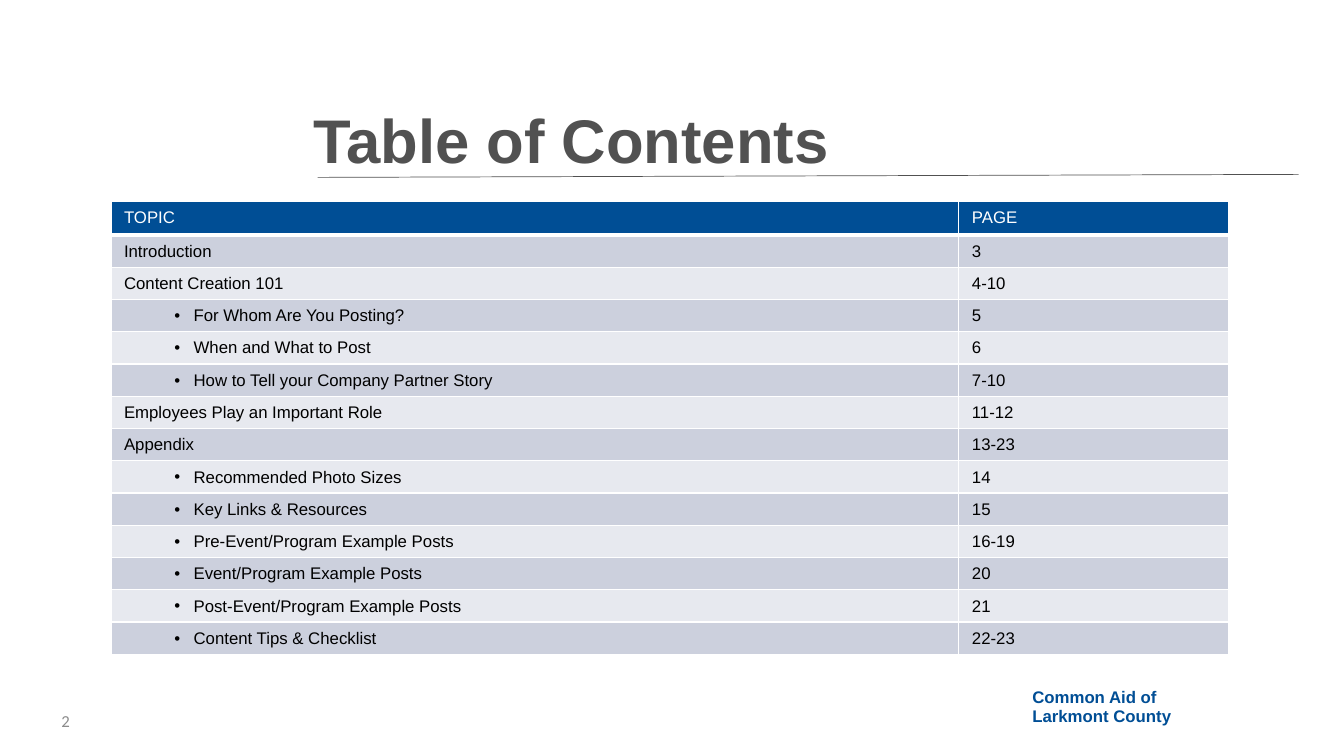
from dataclasses import dataclass

from lxml import etree
from pptx import Presentation, util as u
from pptx.dml.color import RGBColor
from pptx.enum import shapes, text
from pptx.oxml import ns


@dataclass(frozen=True)
class Theme:
    font: str = "Arial"
    plain: str = "Calibri"
    blue: str = "004E95"
    gray: str = "515151"
    pale: str = "8C8C8C"
    white: str = "FFFFFF"
    black: str = "000000"
    bands: tuple = ("CCD0DD", "E7E9EF")
    big: int = 44
    small: int = 12


TOPICS = [
    (0, "Introduction", "3"),
    (0, "Content Creation 101", "4-10"),
    (1, "For Whom Are You Posting?", "5"),
    (1, "When and What to Post", "6"),
    (1, "How to Tell your Company Partner Story", "7-10"),
    (0, "Employees Play an Important Role", "11-12"),
    (0, "Appendix", "13-23"),
    (1, "Recommended Photo Sizes", "14"),
    (1, "Key Links & Resources", "15"),
    (2, "Pre-Event/Program Example Posts", "16-19"),
    (2, "Event/Program Example Posts", "20"),
    (2, "Post-Event/Program Example Posts", "21"),
    (2, "Content Tips & Checklist", "22-23"),
]


def color(code):
    return RGBColor.from_string(code)


def add(parent, tag, **attrs):
    return etree.SubElement(parent, ns.qn(tag), attrs)


def write(frame, words, size, tint, font, bold=False, level=0, space=None):
    """Fill a frame with one paragraph; a level above zero gives it a bullet."""
    para = frame.paragraphs[0]
    para.level = level
    para.line_spacing = space
    if level:
        props = para._p.get_or_add_pPr()
        props.set("marL", str(u.Inches(0.69)))
        props.set("indent", str(u.Inches(-0.19)))
        add(props, "a:buFont", typeface="Arial")
        add(props, "a:buChar", char="•")
    run = para.add_run()
    run.text = words
    run.font.size = u.Pt(size)
    run.font.name = font
    run.font.bold = bold
    run.font.color.rgb = color(tint)


def border(cell, tint, foot):
    """Draw the four cell edges, the bottom one foot points wide."""
    props = cell._tc.get_or_add_tcPr()
    for side, width in zip("LRTB", (1, 1, 1, foot)):
        edge = add(props, f"a:ln{side}", w=str(u.Pt(width)))
        add(add(edge, "a:solidFill"), "a:srgbClr", val=tint)


class Page:
    def __init__(self, deck, theme):
        self.theme = theme
        self.slide = deck.slides.add_slide(deck.slide_layouts[6])

    def label(self, words, box, anchor=text.MSO_ANCHOR.TOP, **style):
        shape = self.slide.shapes.add_textbox(*map(u.Inches, box))
        frame = shape.text_frame
        frame.word_wrap = True
        frame.vertical_anchor = anchor
        write(frame, words, **style)

    def rule(self, *ends):
        line = self.slide.shapes.add_connector(
            shapes.MSO_CONNECTOR.STRAIGHT, *map(u.Inches, ends))
        line.line.color.rgb = color(self.theme.gray)
        line.line.width = u.Pt(0.5)
        add(line._element.spPr, "a:effectLst")

    def cell(self, cell, words, fill, tint, level=0, foot=1):
        cell.margin_left = cell.margin_right = u.Inches(0.13)
        cell.margin_top = u.Inches(0.07)
        cell.margin_bottom = u.Inches(0.05)
        border(cell, self.theme.white, foot)
        cell.fill.solid()
        cell.fill.fore_color.rgb = color(fill)
        write(cell.text_frame, words, self.theme.small, tint,
              self.theme.font, level=level)

    def table(self, heads, rows, left, top, widths, head=0.33, high=0.32):
        look = self.theme
        tall = head + high * len(rows)
        grid = self.slide.shapes.add_table(
            len(rows) + 1, len(widths),
            *map(u.Inches, (left, top, sum(widths), tall))).table
        for col, width in zip(grid.columns, widths):
            col.width = u.Inches(width)
        for i, row in enumerate(grid.rows):
            row.height = u.Inches(high if i else head)
        for j, words in enumerate(heads):
            self.cell(grid.cell(0, j), words, look.blue, look.white, foot=3)
        for i, (level, topic, page) in enumerate(rows):
            fill = look.bands[i % 2]
            self.cell(grid.cell(i + 1, 0), topic, fill, look.black, level)
            self.cell(grid.cell(i + 1, 1), page, fill, look.black)


def main():
    deck = Presentation()
    deck.slide_width = u.Inches(13.33)
    deck.slide_height = u.Inches(7.5)
    look = Theme()
    page = Page(deck, look)
    page.rule(3.15, 1.76, 12.88, 1.73)
    page.label("Table of Contents", (3.01, 0.54, 9.4, 1.26),
               text.MSO_ANCHOR.BOTTOM, size=look.big, tint=look.gray,
               font=look.font, bold=True, space=0.9)
    page.label("2", (0.51, 6.95, 3, 0.4), text.MSO_ANCHOR.MIDDLE,
               size=look.small, tint=look.pale, font=look.plain)
    page.table(("TOPIC", "PAGE"), TOPICS, 1.1, 2, (8.41, 2.68))
    page.label("Common Aid of Larkmont County", (10.14, 6.79, 2.05, 0.31),
               size=look.small, tint=look.blue, font=look.font,
               bold=True, space=0.9)
    deck.save("out.pptx")


if __name__ == "__main__":
    main()
